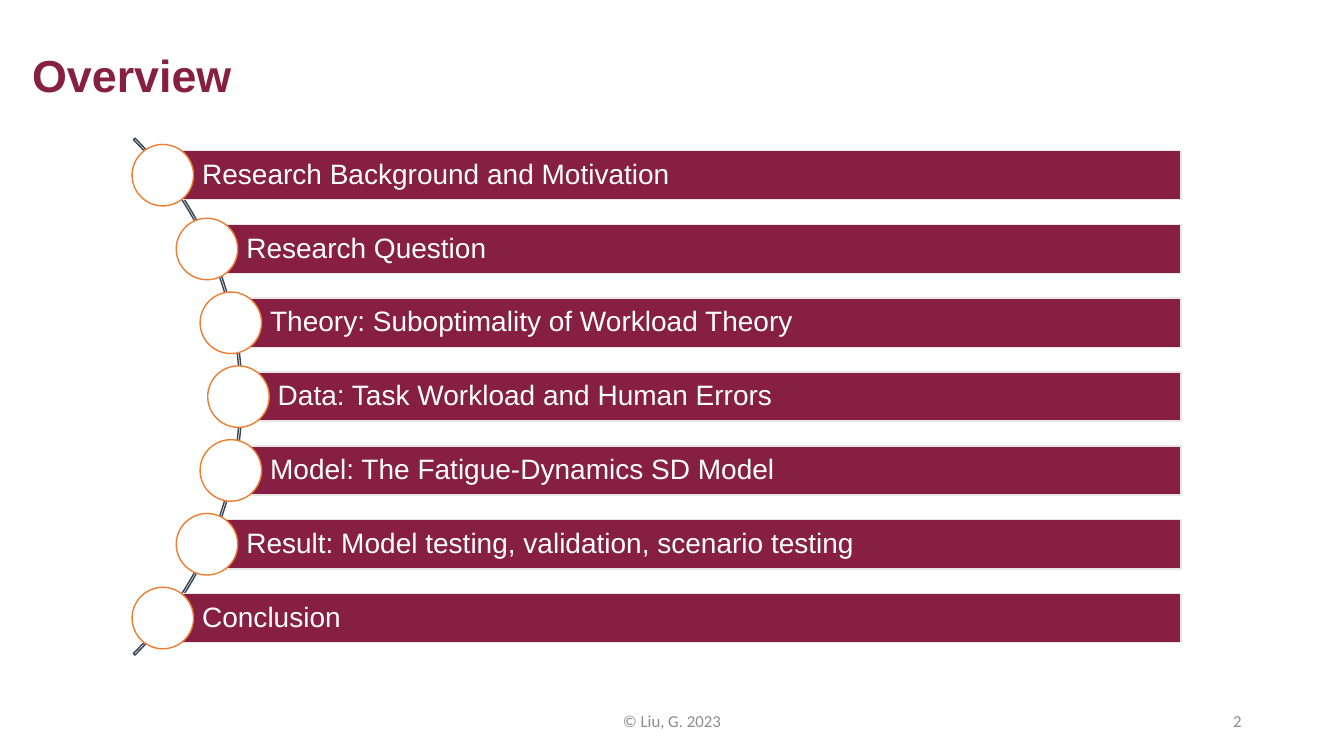
from math import sqrt

from pptx import Presentation
from pptx.dml.color import RGBColor
from pptx.enum.shapes import MSO_SHAPE
from pptx.enum.text import MSO_ANCHOR, PP_ALIGN
from pptx.util import Cm, Pt

MAROON, WHITE, GREY = "861F41", "FFFFFF", "8C8C8C"
TOPICS = [
    "Research Background and Motivation",
    "Research Question",
    "Theory: Suboptimality of Workload Theory",
    "Data: Task Workload and Human Errors",
    "Model: The Fatigue-Dynamics SD Model",
    "Result: Model testing, validation, scenario testing",
    "Conclusion",
]


def color(hex_string):
    return RGBColor.from_string(hex_string)


def write(frame, text, size, font, hex_string, align=PP_ALIGN.LEFT, bold=False):
    frame.word_wrap = True
    frame.vertical_anchor = MSO_ANCHOR.MIDDLE
    paragraph = frame.paragraphs[0]
    paragraph.text = text
    paragraph.alignment = align
    paragraph.font.size = Pt(size)
    paragraph.font.name = font
    paragraph.font.bold = bold
    paragraph.font.color.rgb = color(hex_string)
    return paragraph


def add_outlined(slide, preset, left, top, width, height, line, fill=None):
    shape = slide.shapes.add_shape(preset, Cm(left), Cm(top), Cm(width), Cm(height))
    shape.shadow.inherit = False
    if fill:
        shape.fill.solid()
        shape.fill.fore_color.rgb = color(fill)
    else:
        shape.fill.background()
    shape.line.color.rgb = color(line)
    shape.line.width = Pt(1)
    return shape


def add_title(slide, left, top, width, height):
    title = slide.shapes.add_textbox(Cm(left), Cm(top), Cm(width), Cm(height))
    write(title.text_frame, "Overview", 32, "Arial", MAROON, bold=True).line_spacing = 0.9


def add_footer(slide, left, top, width, height):
    copyright_width, number_width = 11.43, 7.62
    number_left = left + width - number_width
    for text, part_left, part_width, align in (
        ("© Liu, G. 2023", left, copyright_width, PP_ALIGN.CENTER),
        ("2", number_left, number_width, PP_ALIGN.RIGHT),
    ):
        part = slide.shapes.add_textbox(Cm(part_left), Cm(top), Cm(part_width), Cm(height))
        write(part.text_frame, text, 12, "Calibri", GREY, align)


def add_agenda(slide, left, top, width, height):
    bar_height, dot, pitch = 1.24, 1.55, 1.86
    arc_size, radius = 18.42, 9.12
    arc_x, arc_y = left - 6.41, top + height / 2

    arc = add_outlined(slide, MSO_SHAPE.BLOCK_ARC, arc_x - arc_size / 2,
                       arc_y - arc_size / 2, arc_size, arc_size, "364355")
    for index, value in enumerate((189, 27, 0.003)):
        arc.adjustments[index] = value

    for index, topic in enumerate(TOPICS):
        offset = (index - (len(TOPICS) - 1) / 2) * pitch
        x, y = arc_x + sqrt(radius**2 - offset**2), arc_y + offset
        bar = add_outlined(slide, MSO_SHAPE.RECTANGLE, x, y - bar_height / 2,
                           left + width - x, bar_height, "E7E6E6", MAROON)
        frame = bar.text_frame
        frame.margin_left = Cm(0.99)
        frame.margin_top = frame.margin_right = frame.margin_bottom = Cm(0.15)
        write(frame, topic, 20, "Arial", WHITE).line_spacing = 0.9
        add_outlined(slide, MSO_SHAPE.OVAL, x - dot / 2, y - dot / 2, dot, dot,
                     "ED7D31", WHITE)


def main():
    presentation = Presentation()
    presentation.slide_width = Cm(33.87)
    presentation.slide_height = Cm(19.05)
    slide = presentation.slides.add_slide(presentation.slide_layouts[6])
    add_title(slide, 0.56, 0.79, 32.61, 2.36)
    add_footer(slide, 11.22, 17.66, 20.32, 1.01)
    add_agenda(slide, 3.3, 3.63, 26.46, 12.73)
    presentation.save("out.pptx")


if __name__ == "__main__":
    main()
